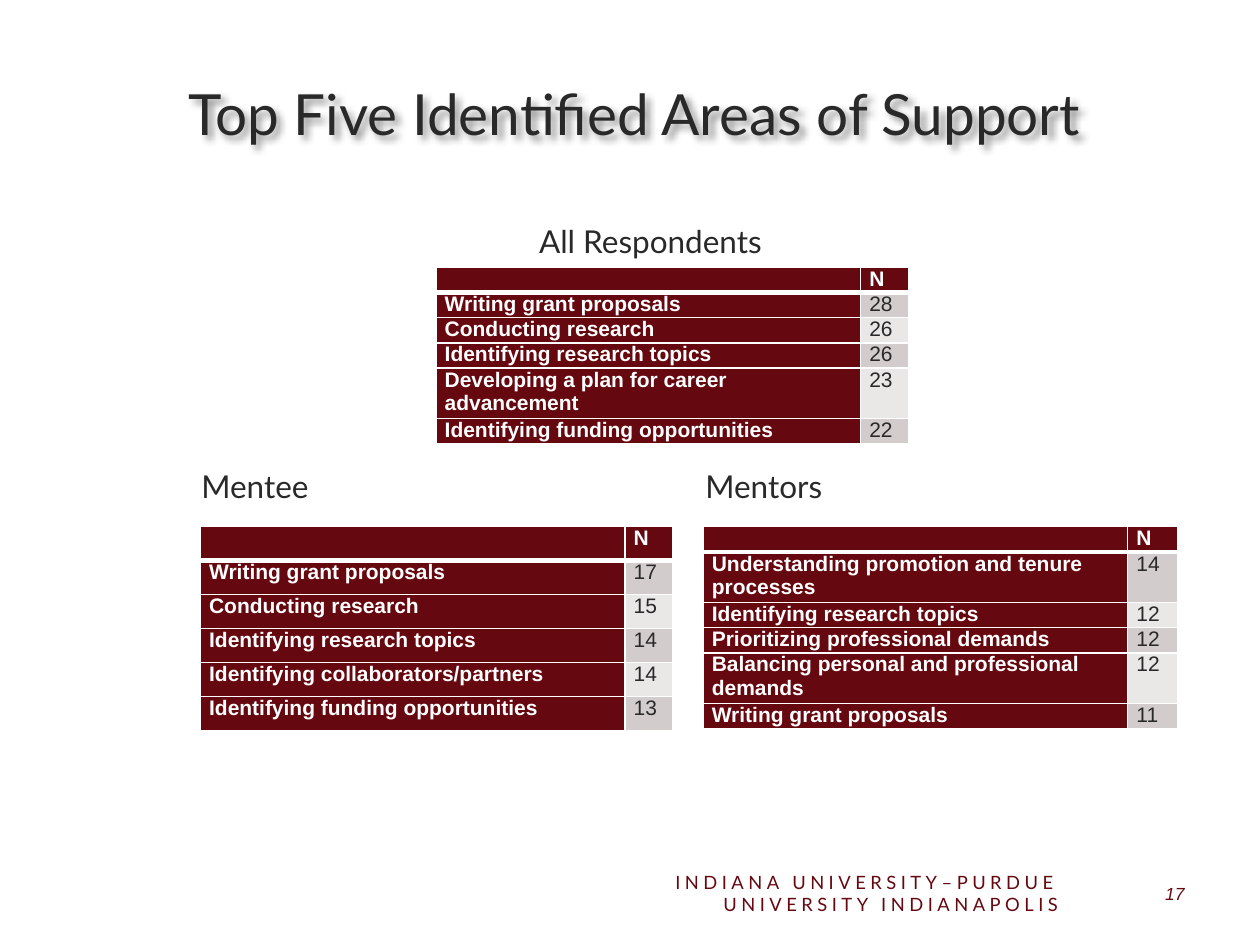
import dataclasses

import lxml.etree
import pptx
import pptx.dml.color
import pptx.enum.text
import pptx.oxml.ns
import pptx.util

Inches = pptx.util.Inches
Pt = pptx.util.Pt
qn = pptx.oxml.ns.qn
RIGHT = pptx.enum.text.PP_ALIGN.RIGHT
MIDDLE = pptx.enum.text.MSO_ANCHOR.MIDDLE


@dataclasses.dataclass(frozen=True)
class Theme:
    ink: str = "292929"
    crimson: str = "66080F"
    white: str = "FFFFFF"
    bands: tuple = ("D3CCCC", "EAE7E7")
    heading_font: str = "Lato"
    body_font: str = "Arial"
    title_size: float = 32.4
    heading_size: float = 18
    table_size: float = 12
    footer_size: float = 10.5
    number_size: float = 10


THEME = Theme()

ALL_RESPONDENTS = [
    ("Writing grant proposals", 28),
    ("Conducting research", 26),
    ("Identifying research topics", 26),
    ("Developing a plan for career advancement", 23),
    ("Identifying funding opportunities", 22),
]
MENTEES = [
    ("Writing grant proposals", 17),
    ("Conducting research", 15),
    ("Identifying research topics", 14),
    ("Identifying collaborators/partners", 14),
    ("Identifying funding opportunities", 13),
]
MENTORS = [
    ("Understanding promotion and tenure processes", 14),
    ("Identifying research topics", 12),
    ("Prioritizing professional demands", 12),
    ("Balancing personal and professional demands", 12),
    ("Writing grant proposals", 11),
]


def rgb(value):
    return pptx.dml.color.RGBColor.from_string(value)


def write(tf, text, size, color=THEME.ink, font=THEME.heading_font,
          bold=False, italic=False, align=None, spacing=None):
    """Fill the first paragraph of a text frame with formatted text."""
    p = tf.paragraphs[0]
    p.alignment = align
    if not text:
        # An empty paragraph still needs its size to hold the row height
        end = lxml.etree.SubElement(p._p, qn("a:endParaRPr"))
        end.set("sz", str(int(size * 100)))
        return
    r = p.add_run()
    r.text = text
    r.font.name = font
    r.font.size = Pt(size)
    r.font.bold = bold
    r.font.italic = italic
    r.font.color.rgb = rgb(color)
    if spacing:
        r._r.get_or_add_rPr().set("spc", str(int(spacing * 100)))


def add_text(s, text, left, top, width, height, size, anchor=None, **fmt):
    sp = s.shapes.add_textbox(Inches(left), Inches(top), Inches(width), Inches(height))
    tf = sp.text_frame
    tf.word_wrap = True
    tf.vertical_anchor = anchor
    write(tf, text, size, **fmt)
    return sp


def add_soft_shadow(sp):
    effects = lxml.etree.SubElement(sp._element.spPr, qn("a:effectLst"))
    shadow = lxml.etree.SubElement(
        effects, qn("a:outerShdw"), blurRad="50800", dist="38100",
        dir="2700000", algn="tl", rotWithShape="0")
    color = lxml.etree.SubElement(shadow, qn("a:srgbClr"), val="000000")
    lxml.etree.SubElement(color, qn("a:alpha"), val="43000")


def add_borders(cell, bottom):
    tc_pr = cell._tc.get_or_add_tcPr()
    for side, width in (("L", 1), ("R", 1), ("T", 1), ("B", bottom)):
        ln = lxml.etree.SubElement(tc_pr, qn("a:ln" + side), w=str(Pt(width)))
        fill = lxml.etree.SubElement(ln, qn("a:solidFill"))
        lxml.etree.SubElement(fill, qn("a:srgbClr"), val=THEME.white)


def add_ranking(s, ranking, left, top, count_width=0.38, row_height=0.18):
    """Table of support areas with their counts, under a header row."""
    rows = [("", "N")] + ranking
    widths = (3.37, count_width)
    table = s.shapes.add_table(
        len(rows), 2, Inches(left), Inches(top),
        Inches(sum(widths)), Inches(row_height * len(rows))).table
    table.horz_banding = False
    for column, width in zip(table.columns, widths):
        column.width = Inches(width)
    for i, row in enumerate(rows):
        table.rows[i].height = Inches(row_height)
        for j, value in enumerate(row):
            cell = table.cell(i, j)
            strong = i == 0 or j == 0
            cell.margin_left = cell.margin_right = Inches(0.07)
            cell.margin_top = cell.margin_bottom = 0
            add_borders(cell, bottom=3 if i == 0 else 1)
            cell.fill.solid()
            cell.fill.fore_color.rgb = rgb(
                THEME.crimson if strong else THEME.bands[(i - 1) % 2])
            write(cell.text_frame, str(value), THEME.table_size,
                  color=THEME.white if strong else THEME.ink,
                  font=THEME.body_font, bold=strong)


def main():
    prs = pptx.Presentation()
    prs.slide_width, prs.slide_height = Inches(10), Inches(7.5)
    s = prs.slides.add_slide(prs.slide_layouts[6])

    # Title
    title = add_text(s, "Top Five Identified Areas of Support",
                     1.4, 0.3, 8.1, 1.19, THEME.title_size, anchor=MIDDLE)
    add_soft_shadow(title)

    # Table headings
    for text, left, top in (("All Respondents", 4.18, 1.71),
                            ("Mentee", 1.5, 3.66),
                            ("Mentors", 5.5, 3.66)):
        add_text(s, text, left, top, 2.5, 0.4, THEME.heading_size)

    # Rankings
    add_ranking(s, ALL_RESPONDENTS, 3.46, 2.12)
    add_ranking(s, MENTEES, 1.59, 4.18, row_height=0.27)
    add_ranking(s, MENTORS, 5.58, 4.18, count_width=0.4)

    # Footer and slide number
    add_text(s, "INDIANA UNIVERSITY–PURDUE UNIVERSITY INDIANAPOLIS",
             4.04, 6.89, 4.46, 0.4, THEME.footer_size, anchor=MIDDLE,
             color=THEME.crimson, align=RIGHT, spacing=2.6)
    add_text(s, "17", 8.6, 6.89, 0.9, 0.4, THEME.number_size, anchor=MIDDLE,
             color=THEME.crimson, font=THEME.body_font, italic=True, align=RIGHT)

    prs.save("out.pptx")


if __name__ == "__main__":
    main()
